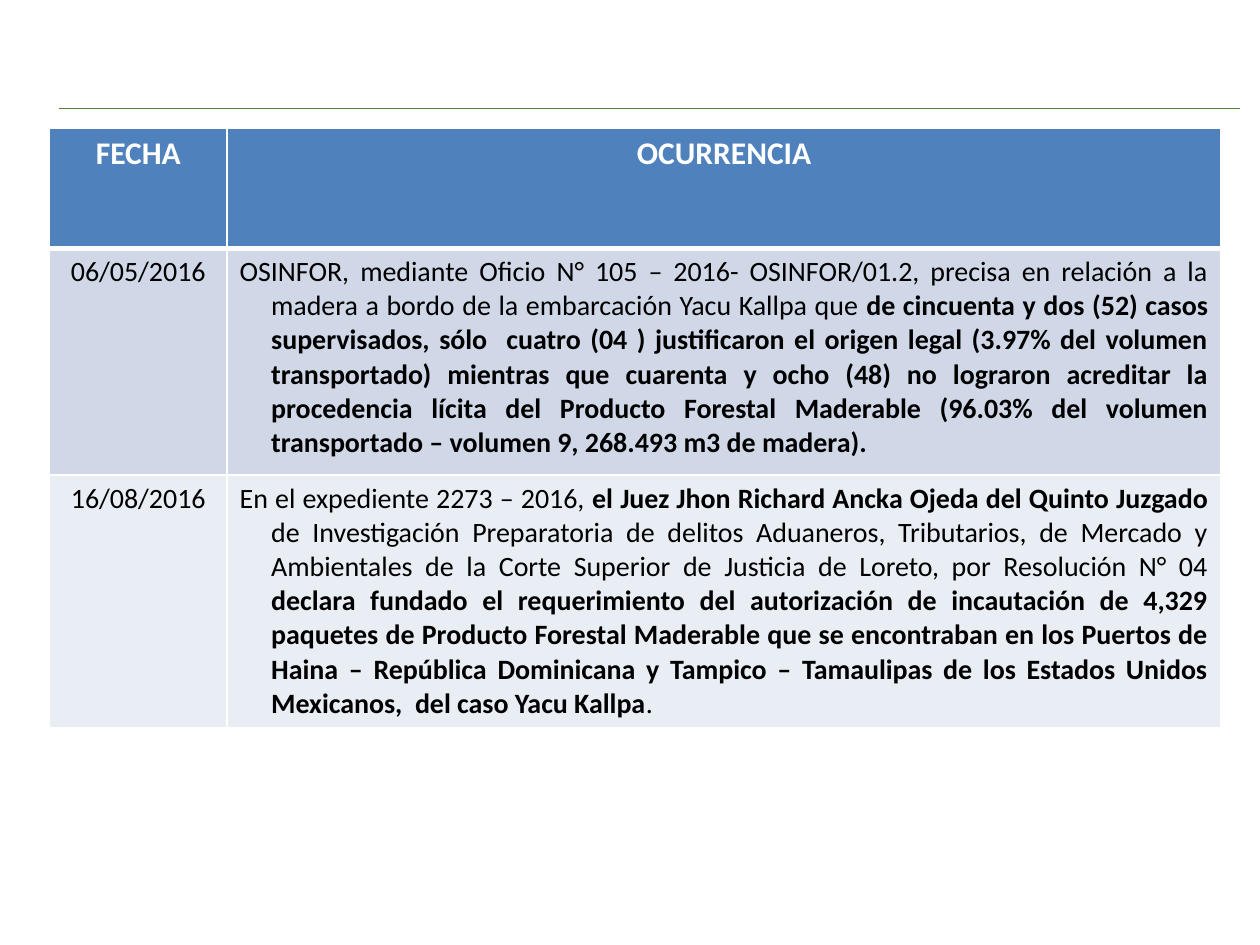
from lxml.etree import SubElement
from pptx import Presentation
from pptx.dml.color import RGBColor
from pptx.enum.shapes import MSO_CONNECTOR as Connector
from pptx.enum.text import PP_ALIGN as Align
from pptx.oxml.ns import qn
from pptx.util import Pt

COLORS = {
    "rule": "548235",
    "header": "4F81BD",
    "band_dark": "D0D8E8",
    "band_light": "E9EDF4",
    "white": "FFFFFF",
    "black": "000000",
}
COLUMN_WIDTHS = [101.5, 568]
ROW_HEIGHTS = [68.5, 129.5, 120]

# Each occurrence is a list of (text, bold) pieces
OCCURRENCES = [
    ("06/05/2016", [
        ("OSINFOR, mediante Oficio N° 105 – 2016- OSINFOR/01.2, precisa en relación a la "
         "madera a bordo de la embarcación Yacu Kallpa que ", False),
        ("de cincuenta y dos (52) casos supervisados, sólo  cuatro (04 ) justificaron el "
         "origen legal (3.97% del volumen transportado) mientras que cuarenta y ocho (48) no "
         "lograron acreditar la procedencia lícita del Producto Forestal Maderable (96.03% del "
         "volumen transportado – volumen 9, 268.493 m3 de madera).", True),
    ]),
    ("16/08/2016", [
        ("En el expediente 2273 – 2016, ", False),
        ("el Juez Jhon Richard Ancka Ojeda del Quinto Juzgado ", True),
        ("de Investigación Preparatoria de delitos Aduaneros, Tributarios, de Mercado y "
         "Ambientales de la Corte Superior de Justicia de Loreto, por Resolución N° 04 ", False),
        ("declara fundado el requerimiento del autorización de incautación de 4,329 paquetes "
         "de Producto Forestal Maderable que se encontraban en los Puertos de Haina – República "
         "Dominicana y Tampico – Tamaulipas de los Estados Unidos Mexicanos,  del caso Yacu "
         "Kallpa", True),
        (".", False),
    ]),
]


def rgb(name):
    return RGBColor.from_string(COLORS[name])


def write(frame, pieces, size=16, color="black", align=Align.CENTER, hanging=0):
    paragraph = frame.paragraphs[0]
    paragraph.alignment = align
    if hanging:
        properties = paragraph._p.get_or_add_pPr()
        properties.set("marL", str(Pt(hanging)))
        properties.set("indent", str(-Pt(hanging)))
    for text, bold in pieces:
        run = paragraph.add_run()
        run.text = text
        font = run.font
        font.name, font.size, font.bold = "Calibri", Pt(size), bold
        font.color.rgb = rgb(color)


def style_cell(cell, fill, bottom=1, top=1):
    widths = {"a:lnL": 1, "a:lnR": 1, "a:lnT": top, "a:lnB": bottom}
    for side, width in widths.items():
        border = SubElement(cell._tc.get_or_add_tcPr(), qn(side), w=str(Pt(width)))
        solid = SubElement(border, qn("a:solidFill"))
        SubElement(solid, qn("a:srgbClr"), val=COLORS["white"])
    cell.fill.solid()
    cell.fill.fore_color.rgb = rgb(fill)


def add_rule(slide, left, top, width):
    rule = slide.shapes.add_connector(
        Connector.STRAIGHT, Pt(left), Pt(top), Pt(left + width), Pt(top))
    rule.line.color.rgb = rgb("rule")
    rule.line.width = Pt(0.5)
    SubElement(rule._element.spPr, qn("a:effectLst"))


def add_occurrence_table(slide, left, top, width, height):
    table = slide.shapes.add_table(
        len(ROW_HEIGHTS), len(COLUMN_WIDTHS), Pt(left), Pt(top), Pt(width), Pt(height)).table
    for column, column_width in zip(table.columns, COLUMN_WIDTHS):
        column.width = Pt(column_width)
    for row, row_height in zip(table.rows, ROW_HEIGHTS):
        row.height = Pt(row_height)

    # Header row
    for cell, heading in zip(table.rows[0].cells, ["FECHA", "OCURRENCIA"]):
        style_cell(cell, "header", bottom=3)
        write(cell.text_frame, [(heading, True)], size=18, color="white")

    # Dated rows, in alternating bands
    for index, (date, account) in enumerate(OCCURRENCES):
        date_cell, account_cell = table.rows[index + 1].cells
        for cell in (date_cell, account_cell):
            style_cell(cell, ["band_dark", "band_light"][index % 2], top=1 if index else 3)
        write(date_cell.text_frame, [(date, False)])
        write(account_cell.text_frame, account, align=Align.JUSTIFY, hanging=18)


def main():
    deck = Presentation()
    deck.slide_width, deck.slide_height = Pt(720), Pt(540)
    slide = deck.slides.add_slide(deck.slide_layouts[6])
    add_rule(slide, left=34, top=62, width=674.5)
    add_occurrence_table(slide, left=28.3, top=73.5,
                         width=sum(COLUMN_WIDTHS), height=sum(ROW_HEIGHTS))
    deck.save("out.pptx")


if __name__ == "__main__":
    main()
